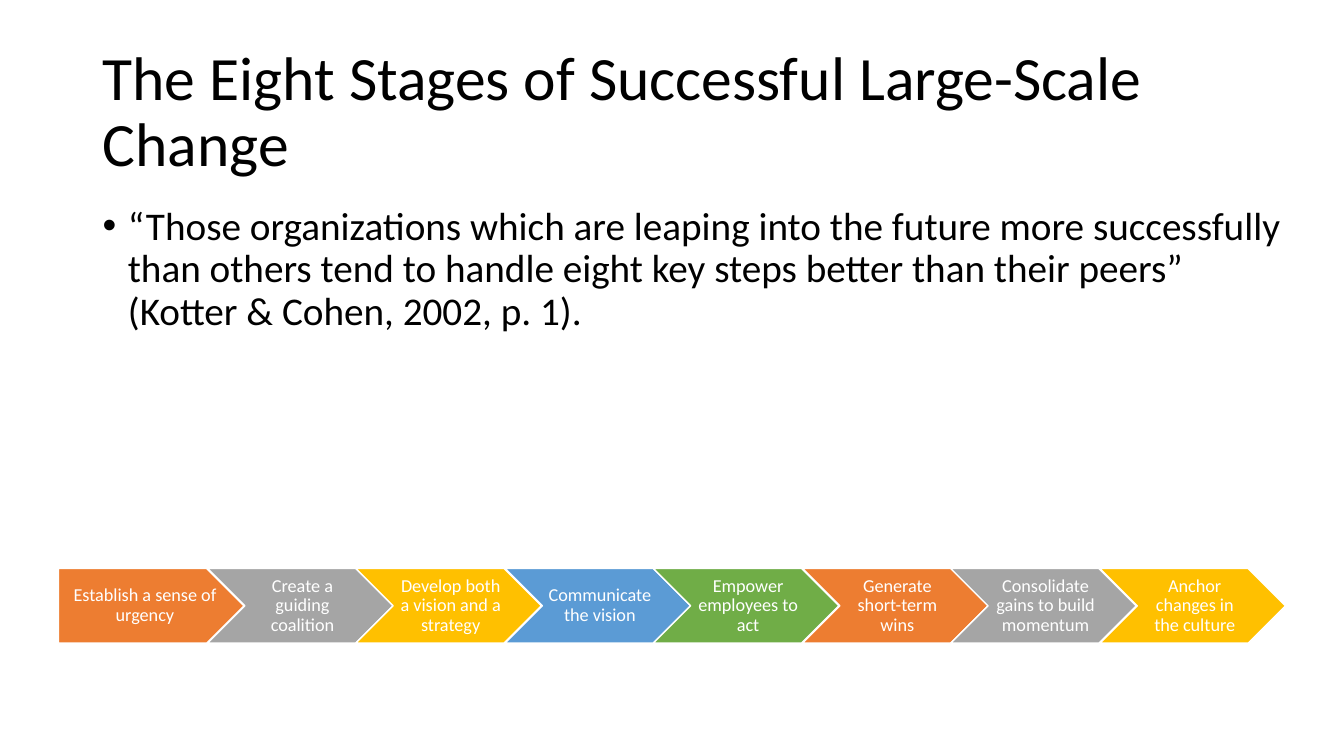
from dataclasses import dataclass

from lxml import etree
from pptx import Presentation
from pptx.dml.color import RGBColor
from pptx.enum.shapes import MSO_SHAPE
from pptx.enum.text import MSO_ANCHOR, PP_ALIGN
from pptx.oxml.ns import qn
from pptx.util import Emu, Pt

EMU_PER_PX = 9144  # 100 px to the inch
FONT = "Calibri"

BLACK = RGBColor(0x00, 0x00, 0x00)
WHITE = RGBColor(0xFF, 0xFF, 0xFF)
ORANGE = RGBColor(0xED, 0x7D, 0x31)
GRAY = RGBColor(0xA5, 0xA5, 0xA5)
GOLD = RGBColor(0xFF, 0xC0, 0x00)
BLUE = RGBColor(0x5B, 0x9B, 0xD5)
GREEN = RGBColor(0x70, 0xAD, 0x47)

PENTAGON = MSO_SHAPE.PENTAGON
CHEVRON = MSO_SHAPE.CHEVRON
TOP = MSO_ANCHOR.TOP
MIDDLE = MSO_ANCHOR.MIDDLE
LEFT = PP_ALIGN.LEFT
CENTER = PP_ALIGN.CENTER

# Stage row: two steps span 295 px
ROW_LEFT, ROW_TOP = 58, 564
STAGE_W, STAGE_H = 184, 74
TWO_STEPS = 295


@dataclass(frozen=True)
class Stage:
    text: str
    color: RGBColor


STAGES = [
    Stage("Establish a sense of urgency", ORANGE),
    Stage("Create a guiding coalition", GRAY),
    Stage("Develop both a vision and a strategy", GOLD),
    Stage("Communicate the vision", BLUE),
    Stage("Empower employees to act", GREEN),
    Stage("Generate short-term wins", ORANGE),
    Stage("Consolidate gains to build momentum", GRAY),
    Stage("Anchor changes in the culture", GOLD),
]


def px(n: int) -> Emu:
    return Emu(n * EMU_PER_PX)


def write(s, text: str, *, size: int, color: RGBColor = BLACK, align=LEFT,
          anchor=TOP, margins: tuple = (10, 5, 10, 5),
          bullet: bool = False) -> None:
    tf = s.text_frame
    tf.word_wrap = True
    tf.vertical_anchor = anchor
    tf.margin_left, tf.margin_top, tf.margin_right, tf.margin_bottom = map(px, margins)
    p = tf.paragraphs[0]
    if bullet:
        pPr = p._p.get_or_add_pPr()
        pPr.set("marL", str(px(25)))
        pPr.set("indent", str(px(-25)))
        etree.SubElement(pPr, qn("a:buFont")).set("typeface", "Arial")
        etree.SubElement(pPr, qn("a:buChar")).set("char", "•")
    p.alignment = align
    p.line_spacing = 0.9
    r = p.add_run()
    r.text = text
    r.font.name = FONT
    r.font.size = Pt(size)
    r.font.color.rgb = color


def add_stage(shapes, index: int, stage: Stage) -> None:
    first = index == 0
    left = ROW_LEFT + (TWO_STEPS * index + 1) // 2
    s = shapes.add_shape(PENTAGON if first else CHEVRON,
                         px(left), px(ROW_TOP), px(STAGE_W), px(STAGE_H))
    s.shadow.inherit = False
    s.fill.solid()
    s.fill.fore_color.rgb = stage.color
    s.line.color.rgb = WHITE
    s.line.width = Pt(1)
    write(s, stage.text, size=13, color=WHITE, align=CENTER, anchor=MIDDLE,
          margins=(8 if first else 6, 4, 2, 4))


def main() -> None:
    prs = Presentation()
    prs.slide_width, prs.slide_height = px(1333), px(750)
    shapes = prs.slides.add_slide(prs.slide_layouts[6]).shapes

    # Title
    title = shapes.add_textbox(px(92), px(40), px(1150), px(145))
    write(title, "The Eight Stages of Successful Large-Scale Change",
          size=44, anchor=MIDDLE)

    # Quotation
    quote = shapes.add_textbox(px(92), px(200), px(1192), px(476))
    write(quote, "“Those organizations which are leaping into the future more "
          "successfully than others tend to handle eight key steps better than "
          "their peers” (Kotter & Cohen, 2002, p. 1).", size=28, bullet=True)

    # Row of stages
    for index, stage in enumerate(STAGES):
        add_stage(shapes, index, stage)

    prs.save("out.pptx")


if __name__ == "__main__":
    main()
